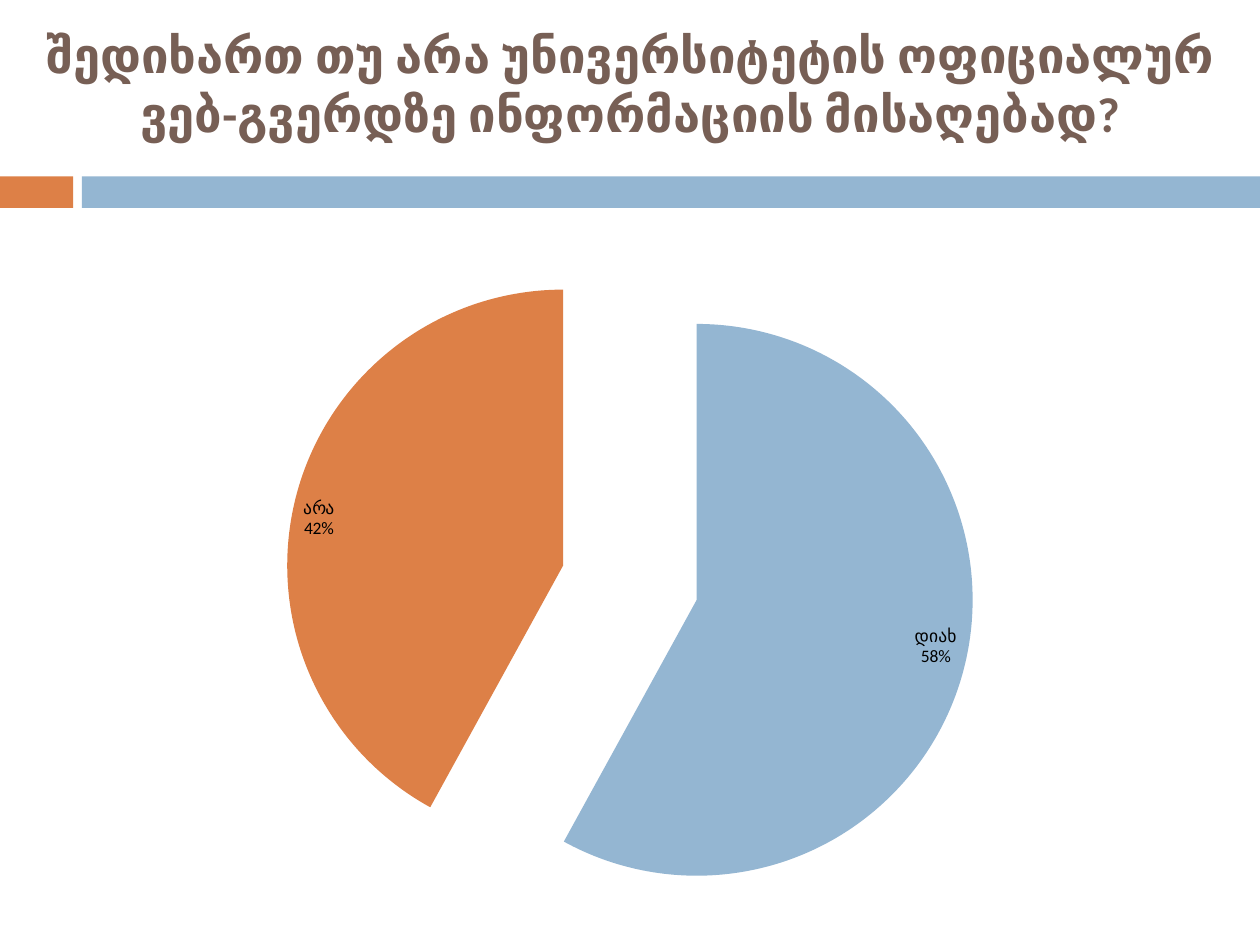
from dataclasses import dataclass

from lxml.etree import SubElement
from pptx import Presentation
from pptx.chart.data import CategoryChartData as ChartData
from pptx.dml.color import RGBColor as Color
from pptx.enum.chart import XL_CHART_TYPE as Kind, XL_LABEL_POSITION as Spot
from pptx.enum.shapes import MSO_SHAPE as Form
from pptx.enum.text import MSO_ANCHOR as Anchor, MSO_AUTO_SIZE as Fit, PP_ALIGN as Align
from pptx.oxml.ns import qn
from pptx.util import Inches, Pt


@dataclass(frozen=True)
class Theme:
    font: str = "Calibri"
    brown: Color = Color.from_string("775F55")
    blue: Color = Color.from_string("94B6D2")
    orange: Color = Color.from_string("DD8047")
    black: Color = Color.from_string("000000")
    head: int = 28
    label: int = 10


THEME = Theme()


def style(font, size, color, bold=False):
    font.name = THEME.font
    font.size = Pt(size)
    font.color.rgb = color
    font.bold = bold


def write(frame, text, size, color, bold=False, align=Align.LEFT, anchor=Anchor.TOP):
    frame.word_wrap = True
    frame.auto_size = Fit.NONE
    frame.vertical_anchor = anchor
    para = frame.paragraphs[0]
    para.alignment = align
    run = para.add_run()
    run.text = text
    style(run.font, size, color, bold)


def add_title(slide, box, text):
    title = slide.shapes.title
    title.left, title.top, title.width, title.height = map(Inches, box)
    write(title.text_frame, text, THEME.head, THEME.brown, bold=True,
          align=Align.CENTER, anchor=Anchor.MIDDLE)


def add_bars(slide, box, split=0.58, gap=0.07):
    left, top, width, height = box
    rest = split + gap
    parts = ((left, split, THEME.orange), (left + rest, width - rest, THEME.blue))
    for x, wide, color in parts:
        bar = slide.shapes.add_shape(Form.RECTANGLE, *map(Inches, (x, top, wide, height)))
        bar.shadow.inherit = False
        bar.fill.solid()
        bar.fill.fore_color.rgb = color
        bar.line.fill.background()


def add_pie(slide, box, votes, burst):
    data = ChartData(number_format="General")
    data.categories = list(votes)
    data.add_series("Series 1", list(votes.values()))
    chart = slide.shapes.add_chart(Kind.PIE_EXPLODED, *map(Inches, box), data).chart
    chart.has_title = False
    chart.has_legend = False
    style(chart.font, THEME.label, THEME.black)

    plot = chart.plots[0]
    plot.vary_by_categories = True
    pie = plot.series[0]
    for index, color in enumerate((THEME.blue, THEME.orange)):
        fill = pie.points[index].format.fill
        fill.solid()
        fill.fore_color.rgb = color

    root = pie._element
    push = root.find(qn("c:explosion"))
    if push is None:
        push = SubElement(root, qn("c:explosion"))
        root.find(qn("c:tx")).addnext(push)
    push.set("val", str(burst))

    labels = pie.data_labels
    labels.show_value = False
    labels.show_category_name = True
    labels.show_percentage = True
    labels.number_format = "0%"
    labels.number_format_is_linked = False
    labels.position = Spot.INSIDE_END
    style(labels.font, THEME.label, THEME.black)
    node = labels._element
    mark = SubElement(node, qn("c:separator"))
    mark.text = "\n"
    node.find(qn("c:showBubbleSize")).addnext(mark)


def main():
    deck = Presentation()
    deck.slide_width, deck.slide_height = Inches(10), Inches(7.5)
    slide = deck.slides.add_slide(deck.slide_layouts[5])
    add_bars(slide, (0, 1.4, 10, 0.25))
    add_title(slide, (0, 0, 10, 1.33),
              "შედიხართ თუ არა უნივერსიტეტის ოფიციალურ ვებ-გვერდზე ინფორმაციის მისაღებად?")
    add_pie(slide, (0, 1.75, 10, 5.75), {"დიახ": 58, "არა": 42}, burst=25)
    deck.save("out.pptx")


if __name__ == "__main__":
    main()
